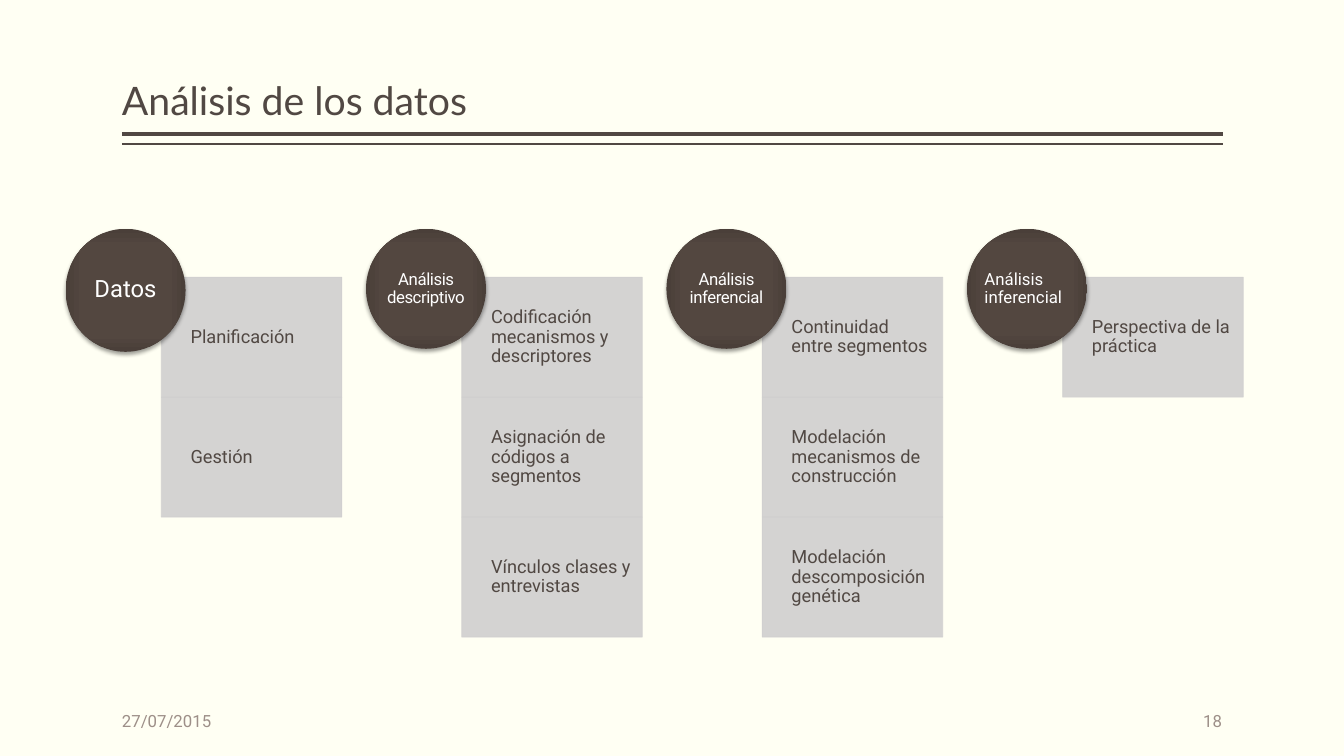
import pptx
import pptx.dml.color
import pptx.enum.shapes
import pptx.enum.text
import pptx.oxml
import pptx.oxml.ns
import pptx.util
from pptx.util import Inches

INK = "514843"
PANEL = "D0CFCF"
MUTED = "9D8F88"
ALIGN = pptx.enum.text.PP_ALIGN
ANCHOR = pptx.enum.text.MSO_ANCHOR
SHAPE = pptx.enum.shapes.MSO_SHAPE
NS = pptx.oxml.ns.nsdecls("a")
qn = pptx.oxml.ns.qn

CIRCLE_FILL = f"""<a:gradFill {NS} rotWithShape="1"><a:gsLst>
<a:gs pos="0"><a:srgbClr val="544740"/></a:gs>
<a:gs pos="71000"><a:srgbClr val="534740"/></a:gs>
<a:gs pos="100000"><a:srgbClr val="4A3F39"/></a:gs></a:gsLst>
<a:path path="rect"><a:fillToRect l="50000" t="50000" r="50000" b="50000"/></a:path>
</a:gradFill>"""
CIRCLE_SHADOW = f"""<a:outerShdw {NS} blurRad="39370" dist="25400" dir="5400000"
rotWithShape="0"><a:srgbClr val="000000"><a:alpha val="38000"/></a:srgbClr></a:outerShdw>"""


def rgb(code):
    return pptx.dml.color.RGBColor.from_string(code)


def write(box, text, size, color, insets, font="Roboto", align=ALIGN.LEFT,
          anchor=ANCHOR.MIDDLE, line_spacing=0.9):
    """Put one paragraph in a shape; insets are left, top, right, bottom in inches."""
    frame = box.text_frame
    frame.word_wrap = True
    frame.vertical_anchor = anchor
    frame.margin_left, frame.margin_top, frame.margin_right, frame.margin_bottom = map(Inches, insets)
    para = frame.paragraphs[0]
    para.alignment = align
    para.line_spacing = line_spacing
    span = para.add_run()
    span.text = text
    span.font.size = pptx.util.Pt(size)
    span.font.name = font
    span.font.color.rgb = rgb(color)
    return span


deck = pptx.Presentation()
deck.slide_width, deck.slide_height = Inches(13.33), Inches(7.5)
page = deck.slides.add_slide(deck.slide_layouts[6])
page.background.fill.solid()
page.background.fill.fore_color.rgb = rgb("FFFFF3")

# Title and double rule
for y, weight in [(1.33, 3), (1.43, 1)]:
    rule = page.shapes.add_connector(pptx.enum.shapes.MSO_CONNECTOR.STRAIGHT,
                                     Inches(1.21), Inches(y), Inches(12.13), Inches(y))
    rule.line.color.rgb = rgb(INK)
    rule.line.width = pptx.util.Pt(weight)
    rule._element.spPr.append(pptx.oxml.parse_xml(f"<a:effectLst {NS}/>"))
title = page.shapes.add_textbox(Inches(1.21), Inches(0.08), Inches(10.92), Inches(1.2))
write(title, "Análisis de los datos", 28, INK, (0, 0.05, 0, 0.05), font="Lato", anchor=ANCHOR.BOTTOM)

# Stages: heading, text size, letter spacing, alignment, circle height, steps
stages = [
    ("Datos", 17, 0, ALIGN.CENTER, 1.22, ["Planificación", "Gestión"]),
    ("Análisis descriptivo", 12, -30, ALIGN.CENTER, 1.19,
     ["Codificación mecanismos y descriptores", "Asignación de códigos a segmentos",
      "Vínculos clases y entrevistas"]),
    ("Análisis inferencial", 12, -30, ALIGN.CENTER, 1.19,
     ["Continuidad entre segmentos", "Modelación mecanismos de construcción",
      "Modelación descomposición genética"]),
    ("Análisis inferencial", 12, 0, ALIGN.LEFT, 1.19, ["Perspectiva de la práctica"]),
]
STEP_HEIGHT = 1.19
for column, (heading, size, spacing, align, height, steps) in enumerate(stages):
    left = 0.65 + 2.98 * column
    for row, step in enumerate(steps):
        panel = page.shapes.add_shape(SHAPE.RECTANGLE, Inches(left + 0.95),
                                      Inches(2.75 + STEP_HEIGHT * row),
                                      Inches(1.79), Inches(STEP_HEIGHT))
        panel.shadow.inherit = False
        panel.fill.solid()
        panel.fill.fore_color.rgb = rgb(PANEL)
        panel.line.color.rgb = rgb(PANEL)
        panel.line.width = pptx.util.Pt(0.5)
        for color in panel._element.spPr.iter(qn("a:srgbClr")):
            color.append(pptx.oxml.parse_xml(f'<a:alpha {NS} val="90000"/>'))
        write(panel, step, 13, INK, (0.29, 0.1, 0.1, 0.1))

    circle = page.shapes.add_shape(SHAPE.OVAL, Inches(left), Inches(2.27),
                                   Inches(1.19), Inches(height))
    circle.line.fill.background()
    circle.shadow.inherit = False
    properties = circle._element.spPr
    properties.find(qn("a:prstGeom")).addnext(pptx.oxml.parse_xml(CIRCLE_FILL))
    properties.find(qn("a:effectLst")).append(pptx.oxml.parse_xml(CIRCLE_SHADOW))
    span = write(circle, heading, size, "FFFFFF", (0, 0, 0, 0), align=align)
    if spacing:
        span._r.get_or_add_rPr().set("spc", str(spacing))

# Footer
for left, text, align in [(1.21, "27/07/2015", ALIGN.LEFT), (10.12, "18", ALIGN.RIGHT)]:
    footer = page.shapes.add_textbox(Inches(left), Inches(6.95), Inches(2), Inches(0.4))
    write(footer, text, 12, MUTED, (0, 0.05, 0, 0.05), align=align, line_spacing=1.0)

deck.save("out.pptx")
